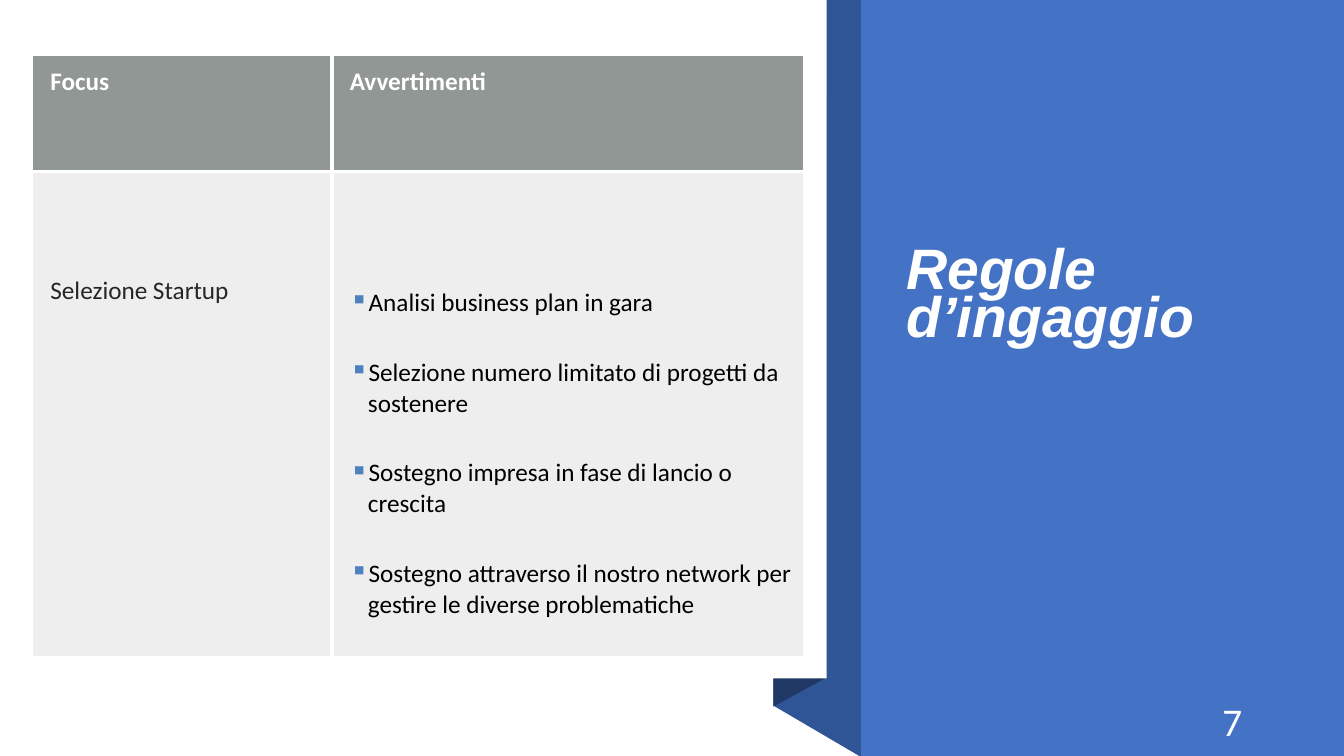
"""Build the "Regole d'ingaggio" slide: a two-column table beside a blue ribbon panel."""
from lxml.etree import SubElement
from pptx import Presentation
from pptx.dml.color import RGBColor
from pptx.enum.shapes import MSO_SHAPE
from pptx.enum.text import MSO_ANCHOR, PP_ALIGN
from pptx.oxml import parse_xml
from pptx.oxml.ns import nsdecls, qn
from pptx.util import Inches, Pt

WHITE = RGBColor(0xFF, 0xFF, 0xFF)
BLACK = RGBColor(0, 0, 0)
CHARCOAL = RGBColor(0x26, 0x26, 0x26)
HEADER_GREY = RGBColor(0x63, 0x6B, 0x68)
BODY_GREY = RGBColor(0x87, 0x8E, 0x8B)
PANEL_BLUE = RGBColor(0x44, 0x72, 0xC4)
RIBBON_BLUE = RGBColor(0x2F, 0x55, 0x97)
FOLD_BLUE = RGBColor(0x20, 0x38, 0x64)
BULLET_BLUE = "4F81BD"

TITLE = "Regole d’ingaggio"
PAGE_NUMBER = "7"
HEADERS = ["Focus", "Avvertimenti"]
FOCUS = ["Selezione Startup"]
WARNINGS = [
    "Analisi business plan in gara",
    "Selezione numero limitato di progetti da sostenere",
    "Sostegno impresa in fase di lancio o crescita",
    "Sostegno attraverso il nostro network per gestire le diverse problematiche",
]
COLUMN_WIDTHS = [2.97, 4.68]
ROW_HEIGHTS = [1.15, 4.81]
RIBBON = [(7.68, 0), (8.54, 0), (8.54, 7.51), (7.67, 7), (7.67, 1.26), (7.68, 1.26)]
FOLD = [(8.2, 6.72), (7.67, 7.01), (7.67, 1.25), (8.2, 0.97)]


def paint(shape, color):
    shape.shadow.inherit = False
    shape.fill.solid()
    shape.fill.fore_color.rgb = color
    shape.line.fill.background()


def add_outline(page, points, color):
    corners = [(Inches(x), Inches(y)) for x, y in points]
    builder = page.shapes.build_freeform(*corners[0])
    builder.add_line_segments(corners[1:], close=True)
    paint(builder.convert_to_shape(), color)


def add_rectangle(page, left, width, height, color):
    paint(page.shapes.add_shape(MSO_SHAPE.RECTANGLE, Inches(left), 0,
                                Inches(width), Inches(height)), color)


def add_text(page, text, area, anchor, size, font_name):
    box = page.shapes.add_textbox(*map(Inches, area))
    frame = box.text_frame
    frame.word_wrap = True
    frame.vertical_anchor = anchor
    para = frame.paragraphs[0]
    para.text = text
    style_font(para.font, size, font_name, WHITE)
    return frame, para


def style_font(font, size, name, color, bold=False):
    font.size, font.name, font.bold = Pt(size), name, bold
    font.color.rgb = color


def fill_cell(cell, lines, top, color, fill, opacity, bold=False):
    cell.margin_left, cell.margin_top = Inches(0.18), Inches(top)
    cell.margin_right = cell.margin_bottom = Inches(0.11)
    cell.fill.solid()
    cell.fill.fore_color.rgb = fill
    for swatch in cell._tc.tcPr.iter(qn("a:srgbClr")):
        SubElement(swatch, qn("a:alpha")).set("val", str(opacity * 1000))
    cell.text = "\n".join(lines)
    for para in cell.text_frame.paragraphs:
        style_font(para.font, 18, "Calibri", color, bold)


def add_inner_borders(cell, row, column):
    sides = ["lnR" if column == 0 else "lnL", "lnB" if row == 0 else "lnT"]
    for index, side in enumerate(sides):
        cell._tc.tcPr.insert(index, parse_xml(
            f'<a:{side} {nsdecls("a")} w="{Pt(3)}"><a:solidFill>'
            f'<a:srgbClr val="{WHITE}"/></a:solidFill></a:{side}>'))


def add_bullets(cell):
    for index, para in enumerate(cell.text_frame.paragraphs):
        para.space_before = Pt(28 if index else 0)
        properties = para._p.get_or_add_pPr()
        properties.set("marL", str(Inches(0.18)))
        properties.set("indent", str(-Inches(0.18)))
        bullet_color = parse_xml(f'<a:buClr {nsdecls("a")}><a:srgbClr val="{BULLET_BLUE}"/></a:buClr>')
        bullet = parse_xml(f'<a:buChar {nsdecls("a")} char="▪"/>')
        position = list(properties).index(properties.find(qn("a:spcBef"))) + 1
        properties.insert(position, bullet_color)
        properties.insert(position + 1, bullet)


def add_rules_table(page):
    table = page.shapes.add_table(2, 2, Inches(0.32), Inches(0.55), Inches(sum(COLUMN_WIDTHS)),
                                  Inches(sum(ROW_HEIGHTS))).table
    table.first_row = table.horz_banding = False
    for index in range(2):
        table.columns[index].width = Inches(COLUMN_WIDTHS[index])
        table.rows[index].height = Inches(ROW_HEIGHTS[index])
        fill_cell(table.cell(0, index), [HEADERS[index]], 0.11, WHITE, HEADER_GREY, 70, True)
    fill_cell(table.cell(1, 0), FOCUS, 1.03, CHARCOAL, BODY_GREY, 15)
    fill_cell(table.cell(1, 1), WARNINGS, 1.15, BLACK, BODY_GREY, 15)
    add_bullets(table.cell(1, 1))
    for row in range(2):
        for column in range(2):
            add_inner_borders(table.cell(row, column), row, column)


def main():
    deck = Presentation()
    deck.slide_width, deck.slide_height = Inches(13.33), Inches(7.5)
    page = deck.slides.add_slide(deck.slide_layouts[6])
    add_outline(page, RIBBON, RIBBON_BLUE)
    add_outline(page, FOLD, FOLD_BLUE)
    add_rectangle(page, 0, 8.2, 6.73, WHITE)
    add_rectangle(page, 8.54, 4.79, 7.5, PANEL_BLUE)
    frame, title = add_text(page, TITLE, (8.89, 1.16, 3.88, 2.99), MSO_ANCHOR.BOTTOM, 40.7, "Arial")
    frame.margin_bottom = Inches(0.71)
    title.line_spacing = 0.7
    title.font.bold = title.font.italic = True
    add_rules_table(page)
    _, number = add_text(page, PAGE_NUMBER, (9.42, 6.95, 3, 0.4), MSO_ANCHOR.MIDDLE, 28, "Calibri")
    number.alignment = PP_ALIGN.RIGHT
    deck.save("out.pptx")


if __name__ == "__main__":
    main()
